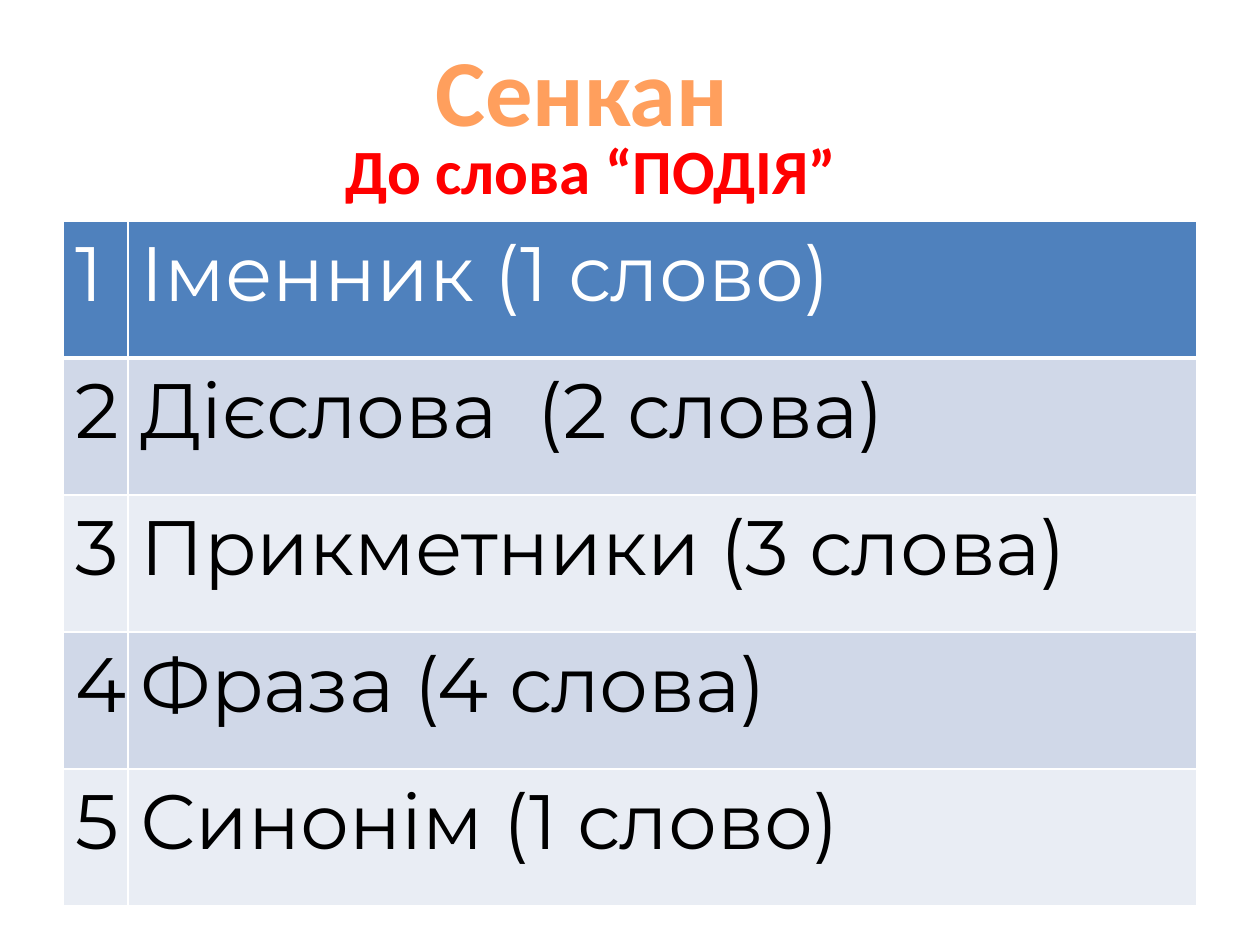
from lxml.etree import SubElement
from pptx import Presentation
from pptx.dml.color import RGBColor
from pptx.enum.text import MSO_ANCHOR, PP_ALIGN
from pptx.oxml.ns import qn
from pptx.util import Inches, Pt

WHITE = RGBColor(0xFF, 0xFF, 0xFF)
BLACK = RGBColor(0x00, 0x00, 0x00)
ORANGE = RGBColor(0xFF, 0x9F, 0x5D)
RED = RGBColor(0xFF, 0x00, 0x00)
BLUE = RGBColor(0x4F, 0x81, 0xBD)
BANDS = [RGBColor(0xE9, 0xED, 0xF4), RGBColor(0xD0, 0xD8, 0xE8)]

HEAD, BODY = "Calibri", "Montserrat"
LINES = [
    "Іменник (1 слово)",
    "Дієслова  (2 слова)",
    "Прикметники (3 слова)",
    "Фраза (4 слова)",
    "Синонім (1 слово)",
]


def px(n):
    return round(n * Inches(1) / 126)


class Page:
    def __init__(self, deck):
        self.slide = deck.slides.add_slide(deck.slide_layouts[5])

    def style(self, frame, text, font, size, color, bold=False, align=PP_ALIGN.LEFT):
        frame.text = text
        para = frame.paragraphs[0]
        para.alignment = align
        face = para.runs[0].font
        face.name, face.size, face.bold = font, Pt(size), bold
        face.color.rgb = color

    def title(self, text, box, size, color):
        shape = self.slide.shapes.title
        shape.left, shape.top, shape.width, shape.height = map(px, box)
        shape.text_frame.vertical_anchor = MSO_ANCHOR.TOP
        self.style(shape.text_frame, text, HEAD, size, color, True, PP_ALIGN.CENTER)

    def label(self, text, box, size, color):
        frame = self.slide.shapes.add_textbox(*map(px, box)).text_frame
        frame.word_wrap = True
        self.style(frame, text, HEAD, size, color, True)

    def edge(self, cell, side, width):
        props = cell._tc.get_or_add_tcPr()
        line = SubElement(props, qn(f"a:ln{side}"), w=str(Pt(width)))
        fill = SubElement(line, qn("a:solidFill"))
        SubElement(fill, qn("a:srgbClr"), val=str(WHITE))

    def table(self, lines, left, top, widths, height, size):
        """Draw a numbered list as a table with a header row and bands."""
        count = len(lines)
        box = map(px, (left, top, sum(widths), height * count))
        grid = self.slide.shapes.add_table(count, len(widths), *box).table
        for col, width in zip(grid.columns, widths):
            col.width = px(width)
        for i, line in enumerate(lines):
            grid.rows[i].height = px(height)
            for j, text in enumerate((str(i + 1), line)):
                cell = grid.cell(i, j)
                for side in "LRTB":
                    thick = (i == 0 and side == "B") or (i == 1 and side == "T")
                    self.edge(cell, side, 3 if thick else 1)
                cell.fill.solid()
                cell.fill.fore_color.rgb = BANDS[i % 2] if i else BLUE
                self.style(cell.text_frame, text, BODY, size, BLACK if i else WHITE)


def main():
    deck = Presentation()
    deck.slide_width, deck.slide_height = Inches(10), Inches(7.5)
    page = Page(deck)
    page.title("Сенкан ", (392, 26, 401, 127), 54, ORANGE)
    page.label("До слова “ПОДІЯ”", (333, 125, 635, 89), 36, RED)
    page.table(LINES, 63, 221, (65, 1069), 137, 44)
    deck.save("out.pptx")


if __name__ == "__main__":
    main()
